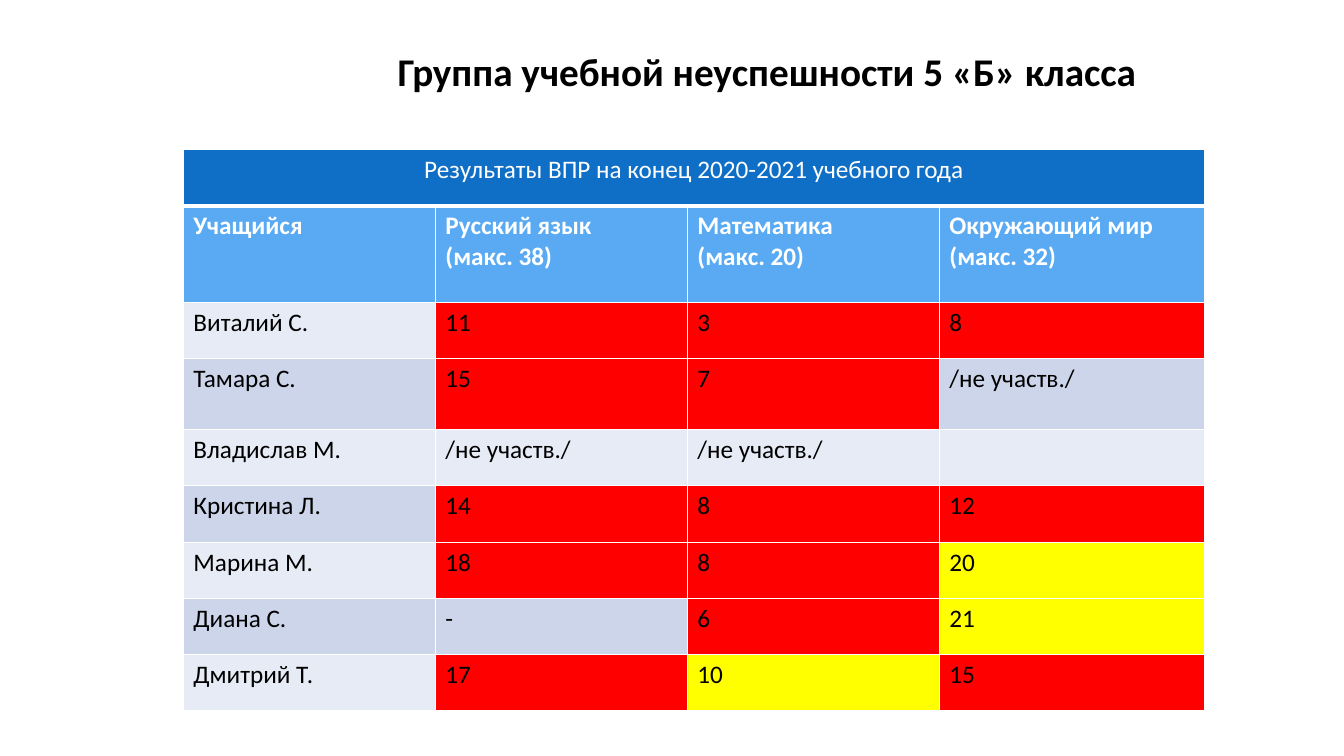
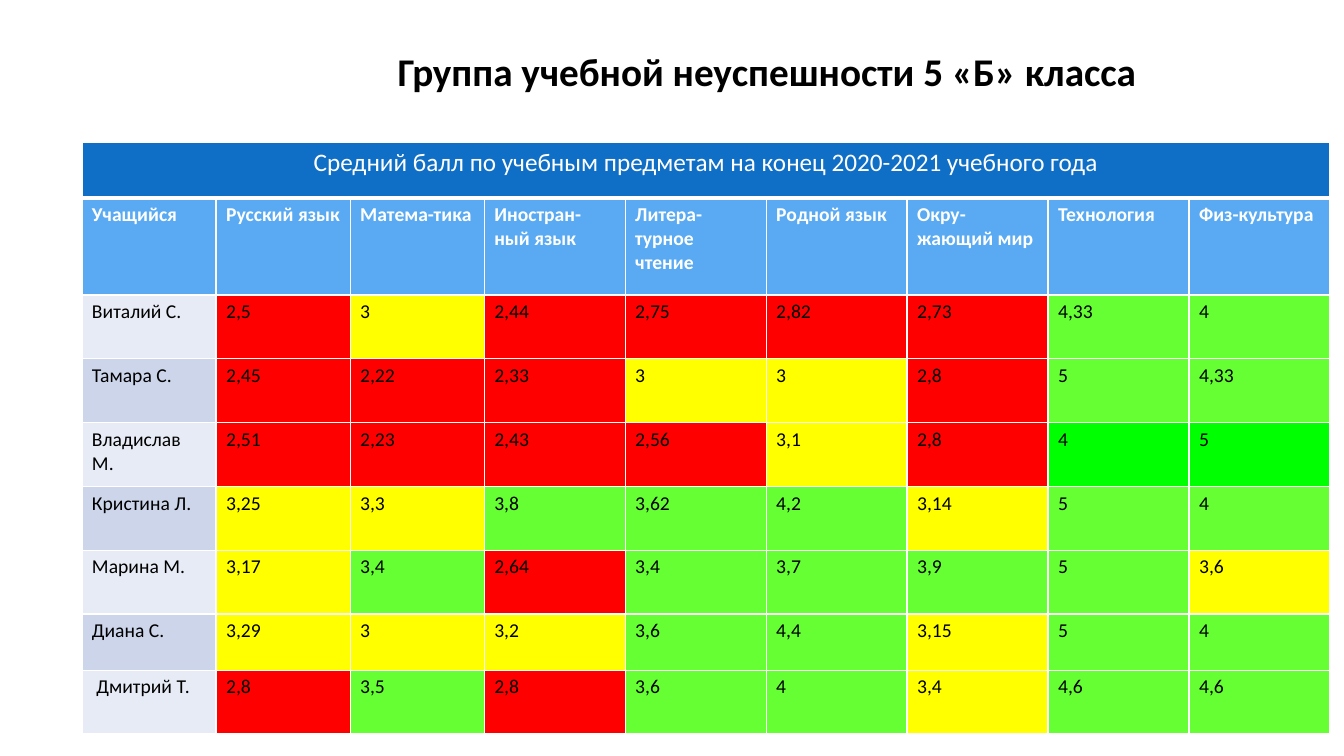
from lxml.etree import SubElement
from pptx import Presentation
from pptx.dml.color import RGBColor
from pptx.enum.text import MSO_ANCHOR, PP_ALIGN
from pptx.oxml.ns import qn
from pptx.util import Pt

SLIDE_WIDTH, SLIDE_HEIGHT = 960, 540
TITLE = "Группа учебной неуспешности 5 «Б» класса"
TITLE_BOX = (196.6, 27.4, 702, 51)
BLACK, WHITE = "000000", "FFFFFF"
CAPTION_FILL, HEADING_FILL = "0F6FC6", "59AAF2"
BANDS = ("E7EBF5", "CCD5EA")
LEVELS = {"R": "FF0000", "Y": "FFFF00", "G": "66FF33", "B": "00FF00"}
CAPTION_HEIGHT, HEADING_HEIGHT = 40.2, 69.1

EXAM = {
    "caption": "Результаты ВПР на конец 2020-2021 учебного года",
    "corner": (131, 106.8),
    "size": 18,
    "columns": [180] * 3 + [189.4],
    "pupil_heights": [40.2, 50.6] + [40.2] * 5,
    "headings": ["Учащийся", "Русский язык\n(макс. 38)", "Математика\n(макс. 20)",
                 "Окружающий мир\n(макс. 32)"],
    "pupils": [
        ("Виталий С.", ["11", "3", "8"], "RRR"),
        ("Тамара С.", ["15", "7", "/не участв./"], "RR-"),
        ("Владислав М.", ["/не участв./", "/не участв./", ""], "---"),
        ("Кристина Л.", ["14", "8", "12"], "RRR"),
        ("Марина М.", ["18", "8", "20"], "RRY"),
        ("Диана С.", ["-", "6", "21"], "-RY"),
        ("Дмитрий Т.", ["17", "10", "15"], "RYR"),
    ],
}

AVERAGES = {
    "caption": "Средний балл по учебным предметам на конец 2020-2021 учебного года",
    "corner": (58.5, 101.4),
    "size": 14,
    "columns": [95.8] * 3 + [100.7] * 6,
    "pupil_heights": [45.6] * 5 + [40.2, 45.6],
    "headings": ["Учащийся", "Русский язык", "Матема-тика", "Иностран-ный язык",
                 "Литера-турное чтение", "Родной язык", "Окру-жающий мир",
                 "Технология", "Физ-культура"],
    "pupils": [
        ("Виталий С.", "2,5 3 2,44 2,75 2,82 2,73 4,33 4".split(), "RYRRRRGG"),
        ("Тамара С.", "2,45 2,22 2,33 3 3 2,8 5 4,33".split(), "RRRYYRGG"),
        ("Владислав М.", "2,51 2,23 2,43 2,56 3,1 2,8 4 5".split(), "RRRRYRBB"),
        ("Кристина Л.", "3,25 3,3 3,8 3,62 4,2 3,14 5 4".split(), "YYGGGYGG"),
        ("Марина М.", "3,17 3,4 2,64 3,4 3,7 3,9 5 3,6".split(), "YGRGGGGY"),
        ("Диана С.", "3,29 3 3,2 3,6 4,4 3,15 5 4".split(), "YYYGGYGG"),
        (" Дмитрий Т.", "2,8 3,5 2,8 3,6 4 3,4 4,6 4,6".split(), "RGRGGYGG"),
    ],
}


def rgb(color):
    return RGBColor.from_string(color)


def apply_format(target, values):
    for name, value in values.items():
        setattr(target, name, value)


def write_text(frame, text, size, color, bold=False, align=PP_ALIGN.LEFT, spacing=1.0):
    frame.text = text
    for paragraph in frame.paragraphs:
        apply_format(paragraph, {"alignment": align, "line_spacing": spacing})
        apply_format(paragraph.font, {"name": "Calibri", "size": Pt(size), "bold": bold})
        for run in paragraph.runs:
            apply_format(run.font, {"name": "Calibri", "size": Pt(size), "bold": bold})
            run.font.color.rgb = rgb(color)


def add_title(slide):
    title = slide.shapes.add_textbox(*map(Pt, TITLE_BOX)).text_frame
    apply_format(title, {"word_wrap": True, "vertical_anchor": MSO_ANCHOR.MIDDLE})
    write_text(title, TITLE, 28, BLACK, bold=True, align=PP_ALIGN.CENTER, spacing=0.9)


def draw_borders(cell, bottom):
    properties = cell._tc.get_or_add_tcPr()
    for side, width in {"lnL": 1, "lnR": 1, "lnT": 1, "lnB": bottom}.items():
        border = SubElement(properties, qn(f"a:{side}"), w=str(Pt(width)))
        fill = SubElement(border, qn("a:solidFill"))
        SubElement(fill, qn("a:srgbClr"), val=WHITE)


def fill_cell(cell, text, fill, size, color, bottom=1, **text_format):
    draw_borders(cell, bottom)
    cell.fill.solid()
    cell.fill.fore_color.rgb = rgb(fill)
    write_text(cell.text_frame, text, size, color, **text_format)


def add_results(slide, results):
    columns, headings = results["columns"], results["headings"]
    heights = [CAPTION_HEIGHT, HEADING_HEIGHT] + results["pupil_heights"]
    size = results["size"]
    left, top = results["corner"]
    table = slide.shapes.add_table(len(heights), len(columns), Pt(left), Pt(top),
                                   Pt(sum(columns)), Pt(sum(heights))).table
    apply_format(table, {"first_row": False, "horz_banding": False})
    for column, width in zip(table.columns, columns):
        column.width = Pt(width)
    for row, height in zip(table.rows, heights):
        row.height = Pt(height)

    table.cell(0, 0).merge(table.cell(0, len(columns) - 1))
    for index, heading in enumerate(headings):
        caption = "" if index else results["caption"]
        fill_cell(table.cell(0, index), caption, CAPTION_FILL, 18, WHITE,
                  bottom=3, align=PP_ALIGN.CENTER)
        fill_cell(table.cell(1, index), heading, HEADING_FILL, size, WHITE, bold=True)

    for index, (pupil, scores, levels) in enumerate(results["pupils"]):
        band = BANDS[index % 2]
        for column, (text, level) in enumerate(zip([pupil] + scores, "-" + levels)):
            fill_cell(table.cell(index + 2, column), text, LEVELS.get(level, band),
                      size, BLACK)


def main():
    presentation = Presentation()
    apply_format(presentation, {"slide_width": Pt(SLIDE_WIDTH),
                                "slide_height": Pt(SLIDE_HEIGHT)})
    for results in (EXAM, AVERAGES):
        slide = presentation.slides.add_slide(presentation.slide_layouts[6])
        add_title(slide)
        add_results(slide, results)
    presentation.save("out.pptx")


if __name__ == "__main__":
    main()
